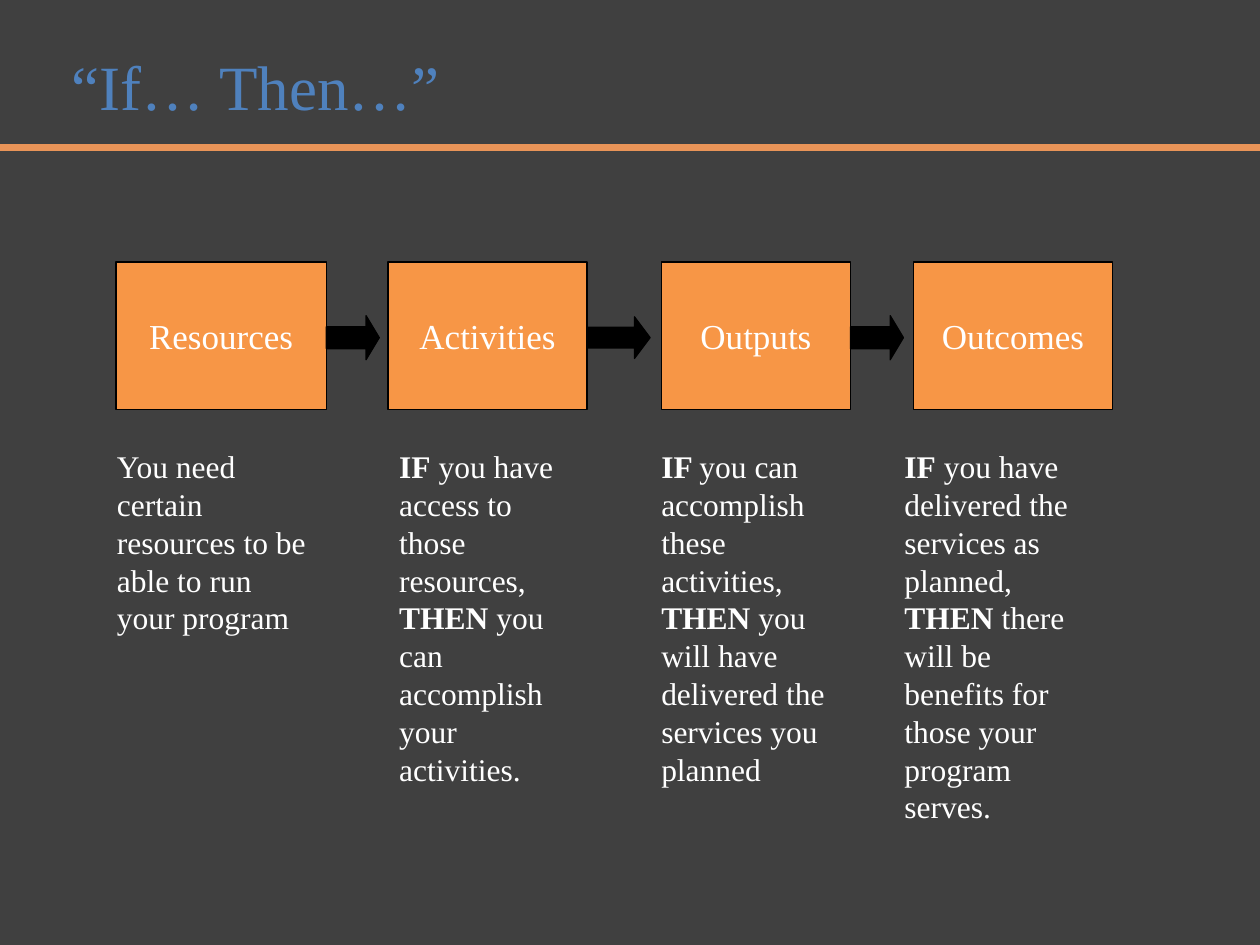
from pptx import Presentation, util as u
from pptx.dml.color import RGBColor
from pptx.enum import shapes, text
from lxml import etree

INK = {"back": "404040", "box": "F79646", "edge": "000000",
       "rule": "E99458", "title": "4F81BD", "text": "FFFFFF"}
FACE = "Times New Roman"
TITLE = "“If… Then…”"
# label, box left and width, note left and width, note parts (text, bold)
STEPS = [
    ("Resources", 0.92, 1.67, 0.83, 1.75,
     [("You need certain resources to be able to run your program", False)]),
    ("Activities", 3.08, 1.58, 3.07, 1.68,
     [("IF", True), (" you have access to those resources, ", False),
      ("THEN", True), (" you can accomplish your activities.", False)]),
    ("Outputs", 5.25, 1.5, 5.15, 1.6,
     [("IF ", True), ("you can accomplish these activities, ", False),
      ("THEN ", True),
      ("you will have delivered the services you planned", False)]),
    ("Outcomes", 7.25, 1.58, 7.08, 1.68,
     [("IF", True), (" you have delivered the services as planned, ", False),
      ("THEN ", True),
      ("there will be benefits for those your program serves.", False)]),
]
ARROWS = [(0.42, 0.35, 0.3), (0.5, 0.33, 0.375), (0.42, 0.35, 0.3)]
TOP, HIGH, NOTE = 2.08, 1.17, 3.5


def color(name):
    return RGBColor.from_string(INK[name])


def write(para, parts, size, ink):
    for words, bold in parts:
        run = para.add_run()
        run.text = words
        form = {"name": FACE, "size": u.Pt(size), "bold": bold}
        for key, val in form.items():
            setattr(run.font, key, val)
        run.font.color.rgb = color(ink)


def shape(kind, place, fill):
    item = slide.shapes.add_shape(kind, *map(u.Inches, place))
    item.shadow.inherit = False
    item.fill.solid()
    item.fill.fore_color.rgb = color(fill)
    item.line.color.rgb = color("edge")
    item.line.width = u.Pt(0.75)
    return item


def label(place, parts, size, ink, **form):
    frame = slide.shapes.add_textbox(*map(u.Inches, place)).text_frame
    for key, val in {"word_wrap": True, **form}.items():
        setattr(frame, key, val)
    write(frame.paragraphs[0], parts, size, ink)
    return frame


deck = Presentation()
deck.slide_width, deck.slide_height = u.Inches(10), u.Inches(7.5)
slide = deck.slides.add_slide(deck.slide_layouts[6])
slide.background.fill.solid()
slide.background.fill.fore_color.rgb = color("back")

for name, left, wide, start, span, parts in STEPS:
    box = shape(shapes.MSO_SHAPE.RECTANGLE, (left, TOP, wide, HIGH), "box")
    box.text_frame.word_wrap = False
    box.text_frame.vertical_anchor = text.MSO_ANCHOR.MIDDLE
    para = box.text_frame.paragraphs[0]
    para.alignment = text.PP_ALIGN.CENTER
    write(para, [(name, False)], 20, "text")
    label((start, NOTE, span, 2.83), parts, 18, "text")

for step, (wide, high, head) in zip(STEPS, ARROWS):
    place = (step[1] + step[2], 2.68 - high / 2, wide, high)
    arrow = shape(shapes.MSO_SHAPE.RIGHT_ARROW, place, "edge")
    arrow.adjustments[0], arrow.adjustments[1] = 0.5, head

rule = slide.shapes.add_connector(
    shapes.MSO_CONNECTOR.STRAIGHT, 0, u.Inches(1.17), u.Inches(10), u.Inches(1.17))
rule.line.color.rgb = color("rule")
rule.line.width = u.Pt(4)
etree.SubElement(
    rule._element.spPr,
    "{http://schemas.openxmlformats.org/drawingml/2006/main}effectLst")

sides = ("margin_left", "margin_top", "margin_right", "margin_bottom")
head = label((0.57, 0.49, 9, 0.47), [(TITLE, False)], 36, "title",
             **dict.fromkeys(sides, 0))
head.paragraphs[0].line_spacing = 0.8

deck.save("out.pptx")
